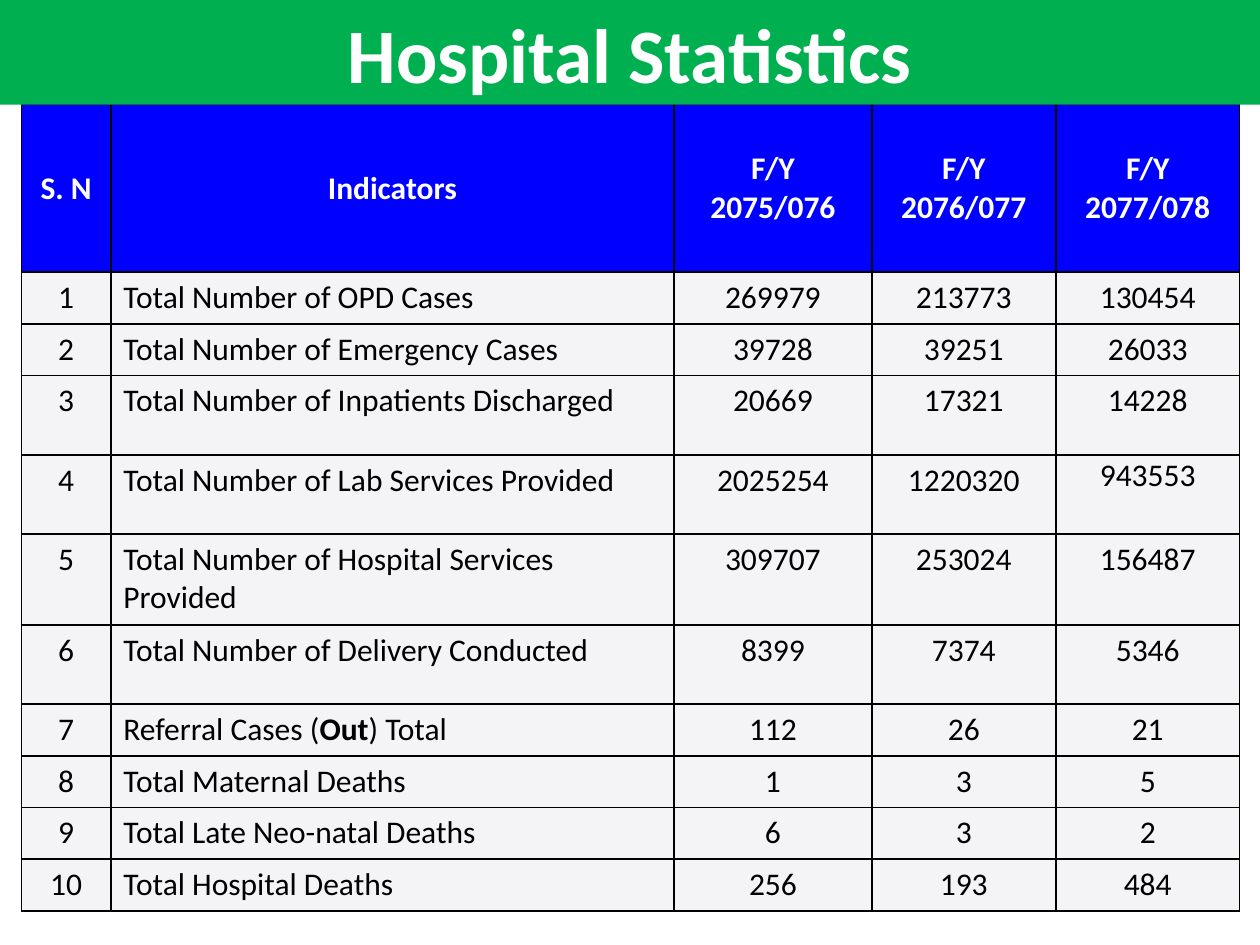
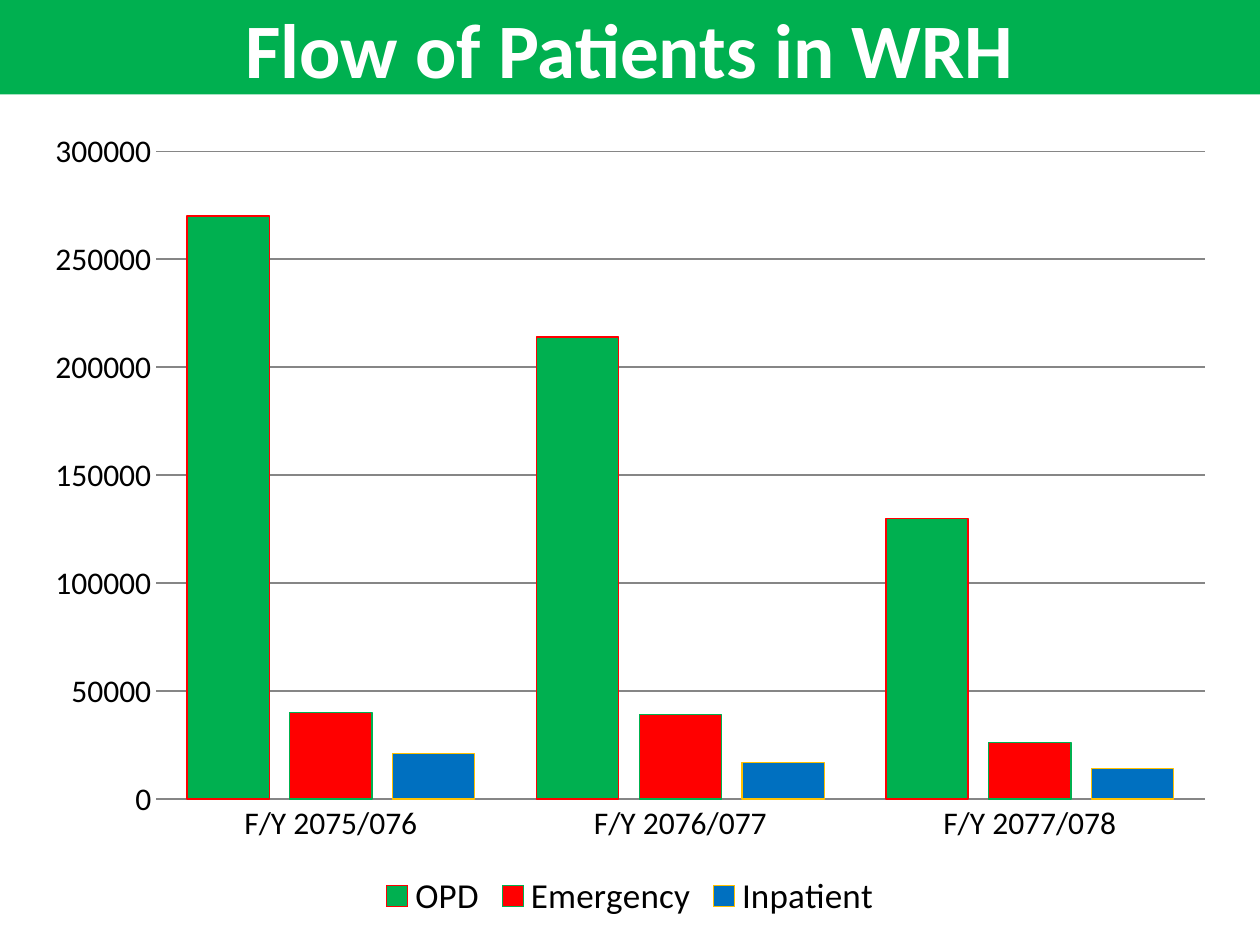
from lxml import etree
from pptx import Presentation
from pptx.chart.data import CategoryChartData
from pptx.dml.color import RGBColor
from pptx.enum.chart import XL_CHART_TYPE, XL_LEGEND_POSITION, XL_TICK_MARK
from pptx.enum.text import MSO_ANCHOR, MSO_AUTO_SIZE, PP_ALIGN
from pptx.oxml.ns import qn
from pptx.util import Inches, Pt

CENTER, LEFT = PP_ALIGN.CENTER, PP_ALIGN.LEFT
TOP, MIDDLE = MSO_ANCHOR.TOP, MSO_ANCHOR.MIDDLE
NO_AUTOFIT = MSO_AUTO_SIZE.NONE
CLUSTERED = XL_CHART_TYPE.COLUMN_CLUSTERED
BOTTOM = XL_LEGEND_POSITION.BOTTOM
NO_TICK = XL_TICK_MARK.NONE
TITLE_ONLY = 5

GREEN, RED, BLUE, GOLD = "00B050", "FF0000", "0070C0", "FFC000"
HEADER_BLUE, ROW_GREY, GRID_GREY = "0000FF", "F4F3F6", "868686"
WHITE, BLACK = "FFFFFF", "000000"

YEARS = ["F/Y 2075/076", "F/Y 2076/077", "F/Y 2077/078"]
INDICATORS = [
    (["Total Number of OPD Cases"], 269979, 213773, 130454),
    (["Total Number of Emergency Cases"], 39728, 39251, 26033),
    (["Total Number of Inpatients Discharged"], 20669, 17321, 14228),
    (["Total Number of Lab Services Provided"], 2025254, 1220320, 943553),
    (["Total Number of Hospital Services Provided"], 309707, 253024, 156487),
    (["Total Number of Delivery Conducted"], 8399, 7374, 5346),
    (["Referral Cases (", "Out", ") Total"], 112, 26, 21),
    (["Total Maternal Deaths"], 1, 3, 5),
    (["Total Late Neo-natal Deaths"], 6, 3, 2),
    (["Total Hospital Deaths"], 256, 193, 484),
]
COLUMN_WIDTHS = [0.71, 4.47, 1.57, 1.46, 1.46]
ROW_HEIGHTS = [1.33, 0.41, 0.41, 0.63, 0.63, 0.72, 0.63] + [0.41] * 4
PATIENT_FLOW = [
    ("OPD", (270000, 214000, 130000), GREEN, RED),
    ("Emergency", (40000, 39000, 26000), RED, GREEN),
    ("Inpatient", (21000, 17000, 14000), BLUE, GOLD),
]


def rgb(value):
    return RGBColor.from_string(value)


def apply(target, **values):
    for name, value in values.items():
        setattr(target, name, value)


def box(*lengths):
    return [Inches(length) for length in lengths]


def paint(fill, color):
    fill.solid()
    fill.fore_color.rgb = rgb(color)


class Deck:
    font_name = "Calibri"

    def __init__(self):
        self.presentation = Presentation()
        apply(self.presentation, slide_width=Inches(10), slide_height=Inches(7.5))
        self.slide = None

    def style(self, font, size, color=BLACK, bold=False):
        apply(font, name=self.font_name, size=Pt(size), bold=bold)
        font.color.rgb = rgb(color)

    def add_slide(self, heading, band_height):
        layout = self.presentation.slide_layouts[TITLE_ONLY]
        self.slide = self.presentation.slides.add_slide(layout)
        title = self.slide.shapes.title
        left, top, width, height = box(0, 0, 10, band_height)
        apply(title, left=left, top=top, width=width, height=height)
        paint(title.fill, GREEN)
        frame = title.text_frame
        apply(frame, text=heading, word_wrap=True, auto_size=NO_AUTOFIT,
              vertical_anchor=MIDDLE)
        frame.paragraphs[0].alignment = CENTER
        self.style(frame.paragraphs[0].runs[0].font, 44, WHITE, True)

    def border(self, cell):
        properties = cell._tc.get_or_add_tcPr()
        for side in ("lnL", "lnR", "lnT", "lnB"):
            line = etree.SubElement(properties, qn(f"a:{side}"), w=str(Pt(1)))
            solid = etree.SubElement(line, qn("a:solidFill"))
            etree.SubElement(solid, qn("a:srgbClr"), val=BLACK)

    def write_cell(self, cell, parts, header, alignment):
        self.border(cell)
        paint(cell.fill, HEADER_BLUE if header else ROW_GREY)
        cell.vertical_anchor = MIDDLE if header else TOP
        paragraph = cell.text_frame.paragraphs[0]
        paragraph.alignment = alignment
        for position, part in enumerate(parts):
            run = paragraph.add_run()
            run.text = part
            emphasized = header or position == 1
            self.style(run.font, 18, WHITE if header else BLACK, emphasized)

    def add_table(self, rows, widths, heights, area):
        table = self.slide.shapes.add_table(len(rows), len(widths), *box(*area)).table
        apply(table, first_row=False, horz_banding=False)
        for column, width in zip(table.columns, widths):
            column.width = Inches(width)
        for row, height in zip(table.rows, heights):
            row.height = Inches(height)
        for r, row in enumerate(rows):
            for c, parts in enumerate(row):
                alignment = LEFT if r and c == 1 else CENTER
                self.write_cell(table.cell(r, c), parts, r == 0, alignment)
        band = self.slide.shapes.title.element
        band.getparent().append(band)
        return table

    def add_column_chart(self, categories, series, area):
        data = CategoryChartData()
        data.categories = categories
        for name, values, _, _ in series:
            data.add_series(name, values)
        chart = self.slide.shapes.add_chart(CLUSTERED, *box(*area), data).chart
        self.style(chart.font, 10)
        apply(chart, has_title=False, has_legend=True)
        apply(chart.legend, position=BOTTOM, include_in_layout=False)
        self.style(chart.legend.font, 20)
        for axis in (chart.category_axis, chart.value_axis):
            apply(axis, major_tick_mark=NO_TICK, minor_tick_mark=NO_TICK)
            self.style(axis.tick_labels.font, 18)
        gridlines = chart.value_axis.major_gridlines.format.line
        for line in (chart.category_axis.format.line, gridlines):
            line.color.rgb = rgb(GRID_GREY)
            line.width = Pt(0.75)
        chart.value_axis.format.line.fill.background()
        apply(chart.value_axis, minimum_scale=0, maximum_scale=300000, major_unit=50000)
        plot = chart.plots[0]
        apply(plot, gap_width=75, overlap=-25, vary_by_categories=False)
        for bars, (_, _, color, outline) in zip(plot.series, series):
            paint(bars.format.fill, color)
            bars.format.line.color.rgb = rgb(outline)
            bars.format.line.width = Pt(0.75)


def main():
    deck = Deck()

    deck.add_slide("Hospital Statistics", 0.83)
    rows = [[[heading] for heading in ["S. N", "Indicators", *YEARS]]]
    for number, (indicator, *counts) in enumerate(INDICATORS, 1):
        rows.append([[str(number)], indicator, *([str(count)] for count in counts)])
    statistics = deck.add_table(rows, COLUMN_WIDTHS, ROW_HEIGHTS, (0.17, 0.83, 9.67, 6.42))
    edge = Inches(0.01)
    apply(statistics.cell(4, 4), margin_left=edge, margin_top=edge,
          margin_right=edge, margin_bottom=0)

    deck.add_slide("Flow of Patients in WRH", 0.75)
    deck.add_column_chart(YEARS, PATIENT_FLOW, (0.25, 0.92, 9.5, 6.42))

    deck.presentation.save("out.pptx")


if __name__ == "__main__":
    main()
